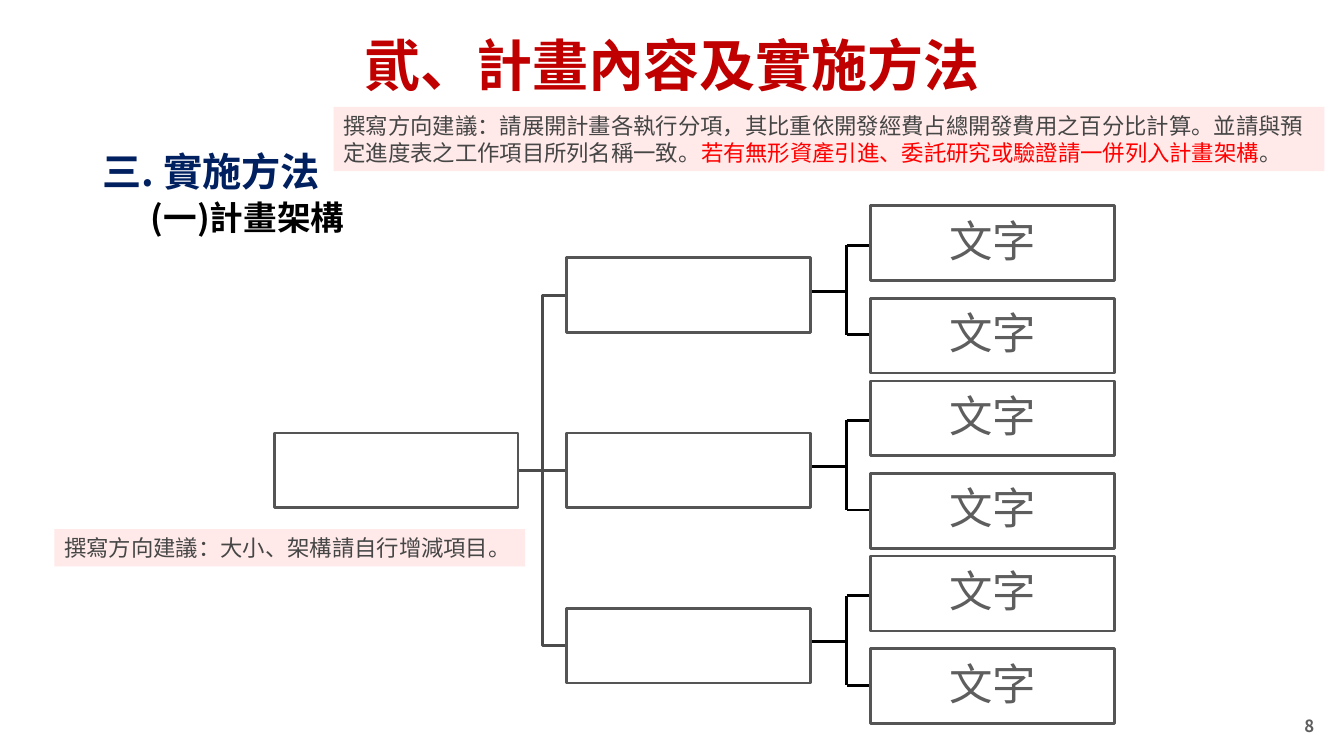
from lxml.etree import SubElement
from pptx import Presentation
from pptx.dml.color import RGBColor
from pptx.enum.shapes import MSO_CONNECTOR as Connector, MSO_SHAPE as Preset
from pptx.enum.text import MSO_ANCHOR as Anchor, PP_ALIGN as Align
from pptx.oxml.ns import qn
from pptx.util import Pt

FONT = "Noto Sans CJK SC"


def style(paragraph, size, color, bold=False):
    font = paragraph.font
    font.size, font.bold, font.name = Pt(size), bold, FONT
    font.color.rgb = RGBColor.from_string(color)
    defaults = paragraph._p.pPr.find(qn("a:defRPr"))
    SubElement(defaults, qn("a:ea"), typeface=FONT)


def connect(kind, x1, y1, x2, y2, color):
    connector = slide.shapes.add_connector(kind, Pt(x1), Pt(y1), Pt(x2), Pt(y2))
    connector.line.color.rgb = RGBColor.from_string(color)
    connector.line.width = Pt(2)
    SubElement(connector._element.spPr, qn("a:effectLst"))


presentation = Presentation()
presentation.slide_width, presentation.slide_height = Pt(960), Pt(540)
slide = presentation.slides.add_slide(presentation.slide_layouts[5])

title = slide.shapes.title
title.left, title.top, title.width, title.height = Pt(156), Pt(9.4), Pt(648), Pt(72.7)
title.text_frame.text = "貮、計畫內容及實施方法"
title.text_frame.vertical_anchor = Anchor.MIDDLE
title.text_frame.paragraphs[0].alignment = Align.CENTER
style(title.text_frame.paragraphs[0], 40, "C00000", True)

page_number = slide.shapes.add_textbox(Pt(923.8), Pt(507.6), Pt(23), Pt(22.3))
frame = page_number.text_frame
frame.margin_left = frame.margin_right = frame.margin_top = frame.margin_bottom = Pt(4.3)
frame.vertical_anchor = Anchor.BOTTOM
frame.text = "8"
frame.paragraphs[0].alignment = Align.CENTER
style(frame.paragraphs[0], 12, "5E5E5E", True)

headings = slide.shapes.add_textbox(Pt(66.2), Pt(101.5), Pt(216), Pt(72)).text_frame
headings.word_wrap = True
heading = headings.paragraphs[0]
heading.text = "三. 實施方法"
style(heading, 28, "002060", True)
subheading = headings.add_paragraph()
subheading.text = "(一)計畫架構"
subheading.space_before = Pt(2)
subheading._p.get_or_add_pPr().set("marL", str(Pt(34.5)))
style(subheading, 24, "000000", True)

BOX_WIDTH, BOX_HEIGHT = 174.3, 53.5
ROOT_LEFT, BRANCH_LEFT, LEAF_LEFT = 195.8, 404.8, 622
BRANCH_TOP, LEAF_TOP = 184.2, 147
BRANCH_STEP, LEAF_STEP = 125.1, 66
FORK_X = 604.8

root_top = BRANCH_TOP + BRANCH_STEP
root_middle = root_top + BOX_HEIGHT / 2
boxes = [(ROOT_LEFT, root_top, "")]
for row in range(3):
    branch_top = BRANCH_TOP + row * BRANCH_STEP
    boxes.append((BRANCH_LEFT, branch_top, ""))
    kind = Connector.STRAIGHT if row == 1 else Connector.ELBOW
    connect(kind, ROOT_LEFT + BOX_WIDTH, root_middle,
            BRANCH_LEFT, branch_top + BOX_HEIGHT / 2, "4B4B4B")

    stem_y = 208.2 + row * BRANCH_STEP
    connect(Connector.STRAIGHT, BRANCH_LEFT + BOX_WIDTH, stem_y, FORK_X, stem_y, "000000")
    fork_top = 175.2 + row * BRANCH_STEP
    fork_bottom = fork_top + 64
    connect(Connector.STRAIGHT, FORK_X, fork_top, FORK_X, fork_bottom, "000000")
    for leaf, fork_y in enumerate((fork_top, fork_bottom)):
        connect(Connector.STRAIGHT, FORK_X, fork_y, LEAF_LEFT, fork_y, "000000")
        boxes.append((LEAF_LEFT, LEAF_TOP + row * BRANCH_STEP + leaf * LEAF_STEP, "文字"))

for left, top, label in boxes:
    box = slide.shapes.add_shape(Preset.RECTANGLE, Pt(left), Pt(top), Pt(BOX_WIDTH), Pt(BOX_HEIGHT))
    box.shadow.inherit = False
    box.fill.solid()
    box.fill.fore_color.rgb = RGBColor.from_string("FFFFFF")
    box.line.color.rgb = RGBColor.from_string("555555")
    box.line.width = Pt(2)
    if label:
        frame = box.text_frame
        frame.margin_left = frame.margin_right = frame.margin_top = frame.margin_bottom = Pt(1.5)
        frame.vertical_anchor = Anchor.MIDDLE
        frame.text = label
        paragraph = frame.paragraphs[0]
        paragraph.alignment = Align.CENTER
        paragraph.line_spacing = 0.9
        paragraph.space_after = Pt(10.8)
        style(paragraph, 31, "5E5E5E")

notes = [
    (38.9, 378, 336.2, 26.6, [("撰寫方向建議：大小、架構請自行增減項目。", "464646")]),
    (238.3, 76.3, 707.8, 46, [
        ("撰寫方向建議：請展開計畫各執行分項，其比重依開發經費占總開發費用之百分比計算。"
         "並請與預定進度表之工作項目所列名稱一致。", "464646"),
        ("若有無形資產引進、委託研究或驗證請一併列入計畫架構", "FF0000"),
        ("。", "464646"),
    ]),
]
for left, top, width, height, pieces in notes:
    note = slide.shapes.add_shape(Preset.RECTANGLE, Pt(left), Pt(top), Pt(width), Pt(height))
    note.shadow.inherit = False
    note.fill.solid()
    note.fill.fore_color.rgb = RGBColor.from_string("FFEAE9")
    note.line.fill.background()
    note.text_frame.vertical_anchor = Anchor.TOP
    paragraph = note.text_frame.paragraphs[0]
    paragraph.alignment = Align.LEFT
    style(paragraph, 16, "464646")
    for text, color in pieces:
        run = paragraph.add_run()
        run.text = text
        run.font.color.rgb = RGBColor.from_string(color)

presentation.save("out.pptx")
